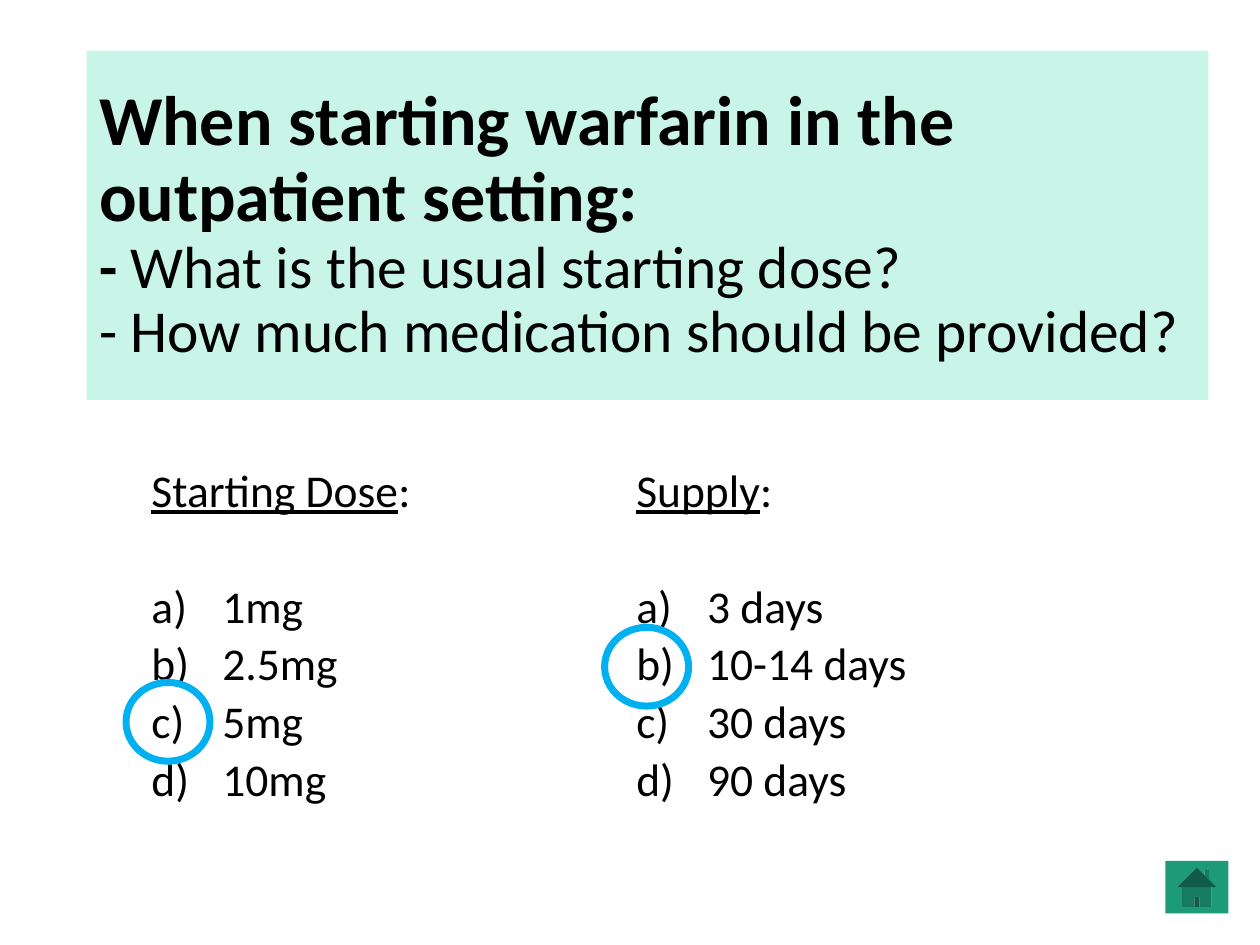
from lxml.etree import SubElement
from pptx import Presentation
from pptx.dml.color import RGBColor
from pptx.enum.shapes import MSO_SHAPE
from pptx.enum.text import MSO_ANCHOR, PP_ALIGN
from pptx.oxml.ns import qn
from pptx.util import Pt


def color(code):
    return RGBColor.from_string(code)


def indent(para, left, hang=0):
    props = para._p.get_or_add_pPr()
    props.set("marL", str(Pt(left)))
    props.set("indent", str(Pt(-hang)))
    return props


class Quiz:
    font, ink = "Calibri", "000000"
    mint, green, blue = "C8F5E8", "1D9A78", "00B0F0"
    size, gap, pitch = 26, 5, 33

    def __init__(self, slide):
        self.slide = slide

    def style(self, run, size, bold=False, line=False):
        font = run.font
        font.name, font.size = self.font, Pt(size)
        font.bold, font.underline = bold, line
        font.color.rgb = color(self.ink)

    def shape(self, kind, box, fill=None, line=None):
        item = self.slide.shapes.add_shape(kind, *map(Pt, box))
        item.shadow.inherit = False
        if fill:
            item.fill.solid()
            item.fill.fore_color.rgb = color(fill)
        else:
            item.fill.background()
        if line:
            item.line.color.rgb = color(line)
            item.line.width = Pt(4)
        else:
            item.line.fill.background()
        return item

    def title(self, box, head, asks):
        frame = self.shape(MSO_SHAPE.RECTANGLE, box, self.mint).text_frame
        frame.word_wrap = True
        frame.vertical_anchor = MSO_ANCHOR.MIDDLE
        para = frame.paragraphs[0]
        para.text = head
        para.alignment, para.line_spacing = PP_ALIGN.LEFT, 0.9
        self.style(para.runs[0], 40, bold=True)
        for bold, ask in zip((True, False), asks):
            para.add_line_break()
            for text, heavy in (("- ", bold), (ask, False)):
                run = para.add_run()
                run.text = text
                self.style(run, 34, heavy)

    def choices(self, box, head, items):
        """Add an underlined heading and a lettered list."""
        frame = self.slide.shapes.add_textbox(*map(Pt, box)).text_frame
        frame.word_wrap = True
        frame.text = "\n".join([head, *items])
        first, *rest = frame.paragraphs
        for para in frame.paragraphs:
            para.line_spacing, para.space_before = 0.9, Pt(self.gap)
            self.style(para.runs[0], self.size, line=para.text == head)
        colon = first.add_run()
        colon.text = ":"
        self.style(colon, self.size)
        indent(first, 31.5)
        rest[0].space_before = Pt(self.gap + self.pitch)
        for para in rest:
            props = indent(para, 72, 40.5)
            SubElement(props, qn("a:buFont"), typeface="+mj-lt")
            SubElement(props, qn("a:buAutoNum"), type="alphaLcParenR")

    def ring(self, left, top):
        self.shape(MSO_SHAPE.OVAL, (left, top, 48, 45), line=self.blue)

    def home(self, box):
        self.shape(MSO_SHAPE.ACTION_BUTTON_HOME, box, self.green)


def main():
    deck = Presentation()
    deck.slide_width, deck.slide_height = Pt(720), Pt(540)
    quiz = Quiz(deck.slides.add_slide(deck.slide_layouts[6]))
    quiz.title((49.5, 29, 641, 199.5),
               "When starting warfarin in the outpatient setting:",
               ("What is the usual starting dose?",
                "How much medication should be provided?"))
    quiz.choices((48, 264, 264, 216), "Starting Dose",
                 ("1mg", "2.5mg", "5mg", "10mg"))
    quiz.ring(72, 390)
    quiz.home((666, 492, 36, 30))
    quiz.choices((325, 264, 264, 204), "Supply",
                 ("3 days", "10-14 days", "30 days", "90 days"))
    quiz.ring(345.5, 358.5)
    deck.save("out.pptx")


if __name__ == "__main__":
    main()
